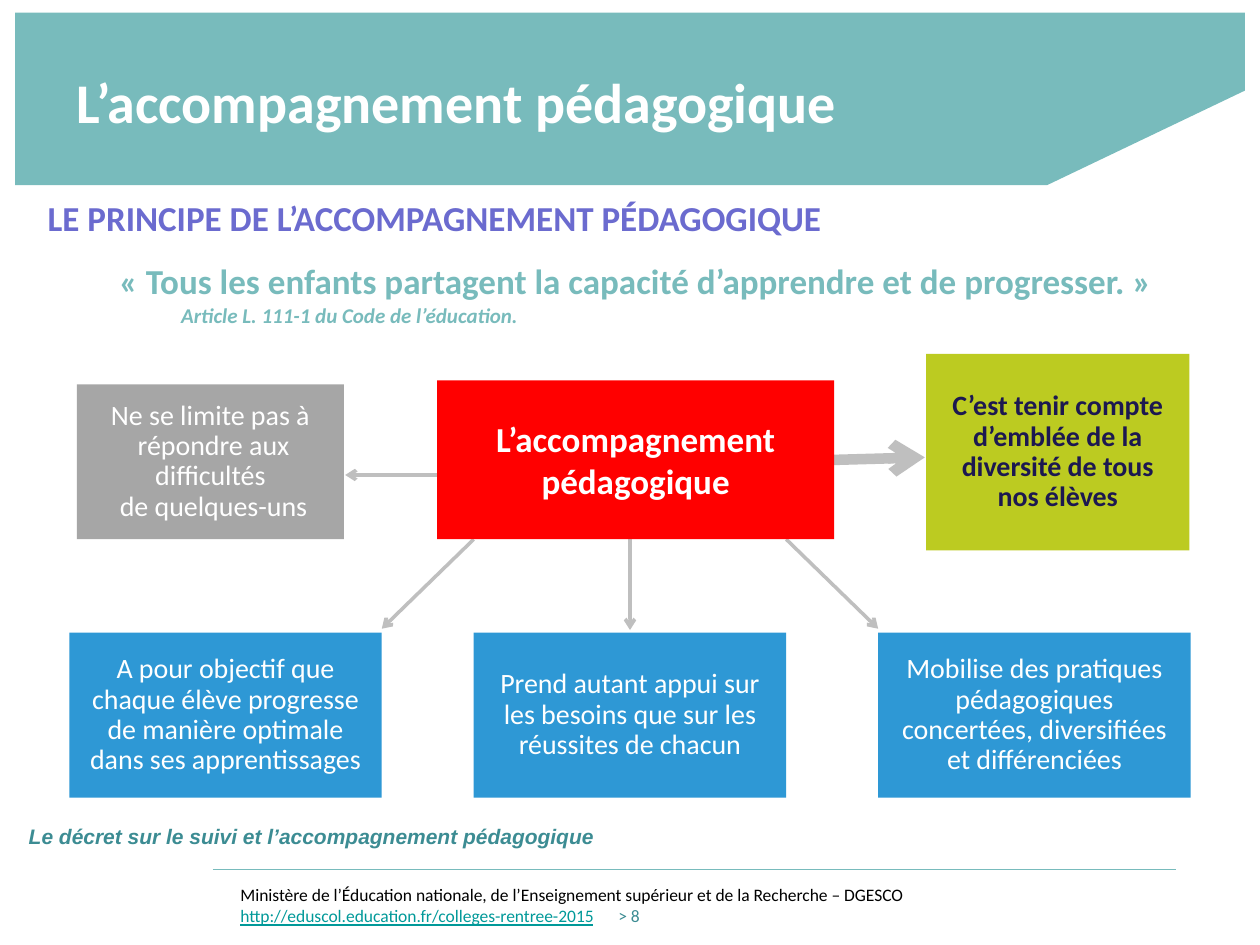
from dataclasses import dataclass

from lxml import etree
from pptx import Presentation
from pptx.dml.color import RGBColor
from pptx.enum.shapes import MSO_CONNECTOR, MSO_SHAPE
from pptx.enum.text import MSO_ANCHOR, PP_ALIGN
from pptx.oxml.ns import qn
from pptx.util import Inches, Pt

LEFT, CENTER = PP_ALIGN.LEFT, PP_ALIGN.CENTER
TOP, MIDDLE = MSO_ANCHOR.TOP, MSO_ANCHOR.MIDDLE
RECTANGLE = MSO_SHAPE.RECTANGLE
STRAIGHT = MSO_CONNECTOR.STRAIGHT
TITLE_ONLY = 5

COLORS = {
    "teal": "78BBBC", "dark teal": "3C8C93", "link": "009999",
    "violet": "6B6BCF", "navy": "1C1850", "white": "FFFFFF",
    "black": "000000", "silver": "BFBFBF", "gray": "A6A6A6",
    "red": "FF0000", "lime": "BCCB21", "blue": "2E98D5",
}


@dataclass
class Span:
    text: str
    size: float
    color: str
    bold: bool = False
    italic: bool = False
    underline: bool = False
    font: str = "Calibri"


@dataclass
class Para:
    spans: list[Span]
    align: int = LEFT
    spacing: float = 1.0
    before: float = 0
    after: float = 0
    indent: float = 0
    tab: float = 0


@dataclass
class Card:
    left: float
    top: float
    width: float
    height: float
    fill: str
    lines: list[str]
    size: float = 16
    color: str = "white"
    bold: bool = False
    spacing: float = 0.9


@dataclass
class Arrow:
    start: tuple[float, float]
    end: tuple[float, float]
    width: float = 2


def rgb(name: str) -> RGBColor:
    return RGBColor.from_string(COLORS[name])


def write(frame, paras: list[Para], anchor=TOP, wrap: bool = True) -> None:
    frame.word_wrap = wrap
    frame.vertical_anchor = anchor
    for index, item in enumerate(paras):
        para = frame.add_paragraph() if index else frame.paragraphs[0]
        para.alignment = item.align
        para.line_spacing = item.spacing
        para.space_before, para.space_after = Pt(item.before), Pt(item.after)
        properties = para._p.get_or_add_pPr()
        if item.indent:
            properties.set("marL", str(Inches(item.indent)))
            properties.set("indent", "0")
        if item.tab:
            tabs = etree.SubElement(properties, qn("a:tabLst"))
            etree.SubElement(tabs, qn("a:tab"), pos=str(Inches(item.tab)), algn="l")
        for span in item.spans:
            run = para.add_run()
            run.text = span.text
            run.font.name, run.font.size = span.font, Pt(span.size)
            run.font.bold, run.font.italic = span.bold, span.italic
            run.font.underline = span.underline
            run.font.color.rgb = rgb(span.color)


def add_text(page, left: float, top: float, width: float, height: float,
             paras: list[Para], wrap: bool = True) -> None:
    box = page.shapes.add_textbox(*map(Inches, (left, top, width, height)))
    write(box.text_frame, paras, wrap=wrap)


def add_line(page, start: tuple[float, float], end: tuple[float, float],
             color: str, width: float):
    line = page.shapes.add_connector(STRAIGHT, *map(Inches, (*start, *end)))
    line.line.color.rgb = rgb(color)
    line.line.width = Pt(width)
    etree.SubElement(line._element.spPr, qn("a:effectLst"))
    return line


def add_arrow(page, arrow: Arrow) -> None:
    line = add_line(page, arrow.start, arrow.end, "silver", arrow.width)
    etree.SubElement(line.line._get_or_add_ln(), qn("a:tailEnd"), type="arrow")


def add_card(page, card: Card) -> None:
    area = map(Inches, (card.left, card.top, card.width, card.height))
    box = page.shapes.add_shape(RECTANGLE, *area)
    box.shadow.inherit = False
    box.fill.solid()
    box.fill.fore_color.rgb = rgb(card.fill)
    box.line.fill.background()
    paras = [Para([Span(line, card.size, card.color, card.bold)], CENTER, card.spacing)
             for line in card.lines]
    write(box.text_frame, paras, MIDDLE)


def add_banner(page) -> None:
    corners = [(0.12, 0.1), (0.12, 1.47), (8.31, 1.47), (9.88, 0.72), (9.88, 0.1)]
    points = [(Inches(x), Inches(y)) for x, y in corners]
    builder = page.shapes.build_freeform(*points[0])
    builder.add_line_segments(points[1:], close=True)
    banner = builder.convert_to_shape()
    banner.shadow.inherit = False
    banner.fill.solid()
    banner.fill.fore_color.rgb = rgb("teal")
    banner.line.fill.background()


def add_title(page, text: str) -> None:
    title = page.shapes.title
    title.left, title.top = Inches(0.51), Inches(0.13)
    title.width, title.height = Inches(8.99), Inches(1.34)
    write(title.text_frame, [Para([Span(text, 32, "white", bold=True)])], MIDDLE)
    title.element.getparent().append(title.element)


ARROWS = [
    Arrow((6.24, 4.28), (6.97, 4.99)),
    Arrow((3.76, 4.28), (3.03, 4.99)),
    Arrow((5, 4.26), (5, 5)),
    Arrow((3.47, 3.77), (2.74, 3.77)),
    Arrow((6.62, 3.65), (7.34, 3.63), 6),
]

GOALS = [
    "A pour objectif que chaque élève progresse de manière optimale dans ses apprentissages",
    "Prend autant appui sur les besoins que sur les réussites de chacun",
    "Mobilise des pratiques pédagogiques concertées, diversifiées et différenciées",
]

CARDS = [
    Card(7.35, 2.81, 2.09, 1.56, "lime",
         ["C’est tenir compte d’emblée de la diversité de tous nos élèves"],
         color="navy", bold=True),
    Card(0.61, 3.05, 2.12, 1.23, "gray",
         ["Ne se limite pas à", " répondre aux difficultés", " de quelques-uns"]),
    Card(3.47, 3.02, 3.15, 1.26, "red", ["L’accompagnement", "pédagogique"],
         size=20, bold=True, spacing=1.0),
] + [Card(0.55 + 3.21 * column, 5.02, 2.48, 1.31, "blue", [goal])
     for column, goal in enumerate(GOALS)]

PRINCIPLE = [
    Para([Span("LE PRINCIPE DE L’ACCOMPAGNEMENT PÉDAGOGIQUE", 20, "violet", bold=True)],
         spacing=0.9),
    Para([Span("« Tous les enfants partagent la capacité d’apprendre et de progresser. »",
               20, "teal", bold=True)], CENTER, 0.9, before=14.4),
    Para([Span("Article L. 111-1 du Code de l’éducation.", 12, "teal", bold=True, italic=True)],
         spacing=0.9, before=2, after=3.6, indent=1.06),
]

DECREE = [Para([Span("Le décret sur le suivi et l’accompagnement pédagogique", 12,
                     "dark teal", bold=True, italic=True, font="Arial")])]

FOOTER = [
    Para([Span("Ministère de l’Éducation nationale, de l’Enseignement supérieur "
               "et de la Recherche – DGESCO", 10, "black")]),
    Para([Span("http://eduscol.education.fr/colleges-rentree-2015", 10, "link", underline=True),
          Span("\t> 8", 10, "dark teal")], tab=3),
]


def main() -> None:
    deck = Presentation()
    deck.slide_width, deck.slide_height = Inches(10), Inches(7.5)
    page = deck.slides.add_slide(deck.slide_layouts[TITLE_ONLY])
    add_banner(page)
    add_line(page, (1.69, 6.9), (9.33, 6.9), "teal", 0.75)
    add_text(page, 1.81, 6.97, 7.76, 0.53, FOOTER)
    add_title(page, "L’accompagnement pédagogique")
    add_text(page, 0.13, 6.49, 4.74, 0.3, DECREE, wrap=False)
    add_text(page, 0.28, 1.55, 9.53, 1.26, PRINCIPLE)
    for arrow in ARROWS:
        add_arrow(page, arrow)
    for card in CARDS:
        add_card(page, card)
    deck.save("out.pptx")


if __name__ == "__main__":
    main()
